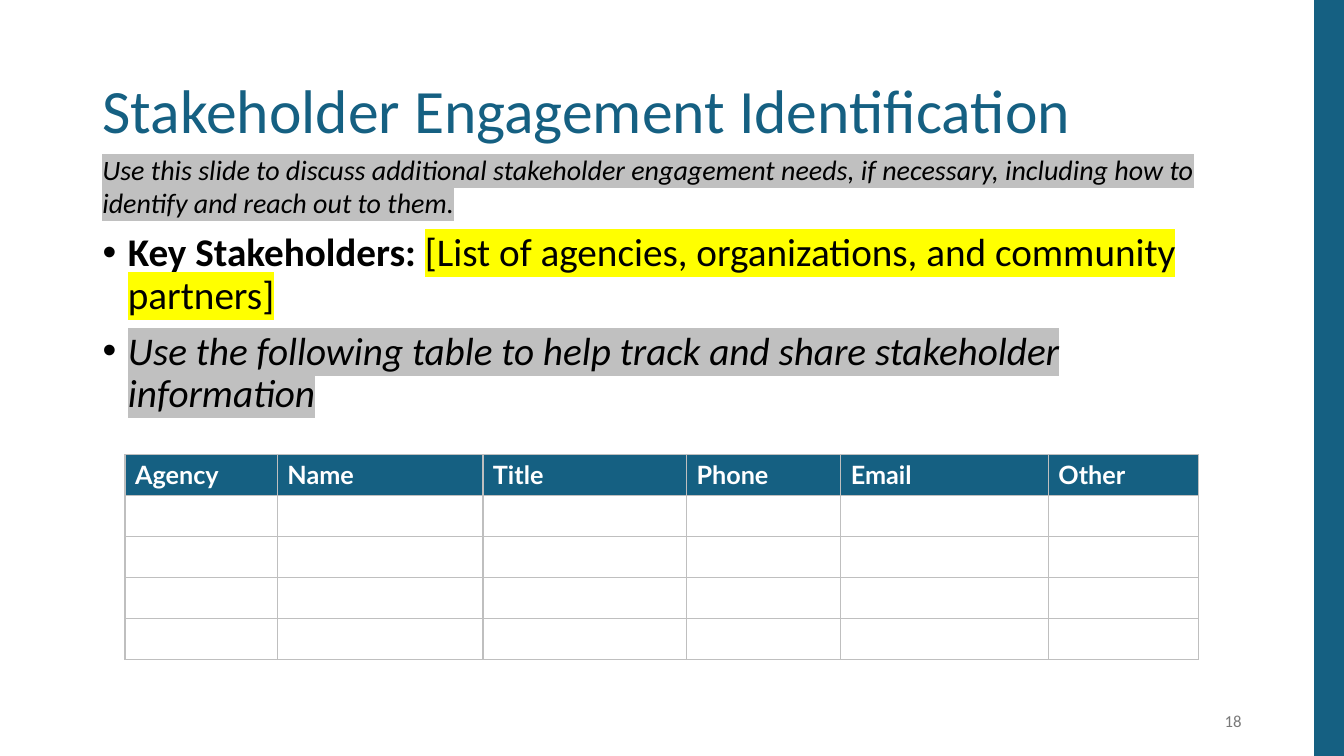
from lxml.etree import SubElement
from pptx import Presentation
from pptx.dml.color import RGBColor
from pptx.enum.shapes import MSO_SHAPE
from pptx.enum.text import MSO_ANCHOR, MSO_AUTO_SIZE, PP_ALIGN
from pptx.oxml.ns import qn
from pptx.util import Cm, Pt

BLUE = "156082"
BLACK = "000000"
GRAY_MARK = "C0C0C0"
YELLOW_MARK = "FFFF00"
GRID = "BFBFBF"


def set_font(font, size, color, name="Calibri"):
    font.size = Pt(size)
    font.name = name
    font.color.rgb = RGBColor.from_string(color)


def add_marked_run(paragraph, text, mark):
    run = paragraph.add_run()
    run.text = text
    properties = run._r.get_or_add_rPr()
    highlight = SubElement(properties, qn("a:highlight"))
    SubElement(highlight, qn("a:srgbClr"), val=mark)


presentation = Presentation()
presentation.slide_width = Cm(33.87)
presentation.slide_height = Cm(19.05)
slide = presentation.slides.add_slide(presentation.slide_layouts[1])
title, body = slide.placeholders

side_bar = slide.shapes.add_shape(MSO_SHAPE.RECTANGLE, Cm(33.12), Cm(0), Cm(0.75), Cm(19.05))
side_bar.shadow.inherit = False
side_bar.fill.solid()
side_bar.fill.fore_color.rgb = RGBColor.from_string(BLUE)
side_bar.line.fill.background()

title.left, title.top, title.width, title.height = Cm(2.33), Cm(1.01), Cm(29.21), Cm(3.68)
title.text_frame.text = "Stakeholder Engagement Identification"
title.text_frame.auto_size = MSO_AUTO_SIZE.NONE
title.text_frame.vertical_anchor = MSO_ANCHOR.MIDDLE
paragraph = title.text_frame.paragraphs[0]
paragraph.alignment = PP_ALIGN.LEFT
paragraph.line_spacing = 0.9
set_font(paragraph.font, 44, BLUE)

guidance = slide.shapes.add_textbox(Cm(2.33), Cm(3.71), Cm(29.21), Cm(1.96))
guidance.text_frame.word_wrap = True
paragraph = guidance.text_frame.paragraphs[0]
add_marked_run(
    paragraph,
    "Use this slide to discuss additional stakeholder engagement needs, if necessary, "
    "including how to identify and reach out to them.",
    GRAY_MARK,
)
set_font(paragraph.font, 20, BLACK)
paragraph.font.italic = True

body.left, body.top, body.width, body.height = Cm(2.33), Cm(5.74), Cm(29.21), Cm(5.16)
body.text_frame.auto_size = MSO_AUTO_SIZE.NONE
stakeholders = body.text_frame.paragraphs[0]
label = stakeholders.add_run()
label.text = "Key Stakeholders: "
label.font.bold = True
add_marked_run(
    stakeholders, "[List of agencies, organizations, and community partners]", YELLOW_MARK
)
table_hint = body.text_frame.add_paragraph()
add_marked_run(
    table_hint,
    "Use the following table to help track and share stakeholder information",
    GRAY_MARK,
)
table_hint.font.italic = True
for paragraph in body.text_frame.paragraphs:
    set_font(paragraph.font, 28, BLACK)
    paragraph.line_spacing = 0.9
    paragraph.space_before = Pt(10)
    properties = paragraph._p.get_or_add_pPr()
    properties.set("marL", str(Cm(0.64)))
    properties.set("indent", str(-Cm(0.64)))

headers = ["Agency", "Name", "Title", "Phone", "Email", "Other"]
column_widths = [3.84, 5.18, 5.13, 3.89, 5.23, 3.78]
row_count = 5
row_height = 1.03
table = slide.shapes.add_table(
    row_count, len(headers), Cm(3.15), Cm(11.46), Cm(sum(column_widths)), Cm(row_count * row_height)
).table
table.horz_banding = False
for column, width in zip(table.columns, column_widths):
    column.width = Cm(width)
for cell in table.iter_cells():
    properties = cell._tc.get_or_add_tcPr()
    for side in ("a:lnL", "a:lnR", "a:lnT", "a:lnB"):
        border = SubElement(properties, qn(side), w=str(Pt(1)))
        border_fill = SubElement(border, qn("a:solidFill"))
        SubElement(border_fill, qn("a:srgbClr"), val=GRID)
    cell.fill.solid()
    cell.fill.fore_color.rgb = RGBColor.from_string("FFFFFF")
for cell, header in zip(table.rows[0].cells, headers):
    cell.text = header
    cell.fill.fore_color.rgb = RGBColor.from_string(BLUE)
    paragraph = cell.text_frame.paragraphs[0]
    set_font(paragraph.font, 18, "FFFFFF", "Lato")
    paragraph.font.bold = True

page_number = slide.shapes.add_textbox(Cm(23.92), Cm(17.66), Cm(7.62), Cm(1.01))
page_number.text_frame.word_wrap = True
page_number.text_frame.vertical_anchor = MSO_ANCHOR.MIDDLE
page_number.text_frame.text = "18"
paragraph = page_number.text_frame.paragraphs[0]
paragraph.alignment = PP_ALIGN.RIGHT
set_font(paragraph.font, 12, "797979")

presentation.save("out.pptx")
